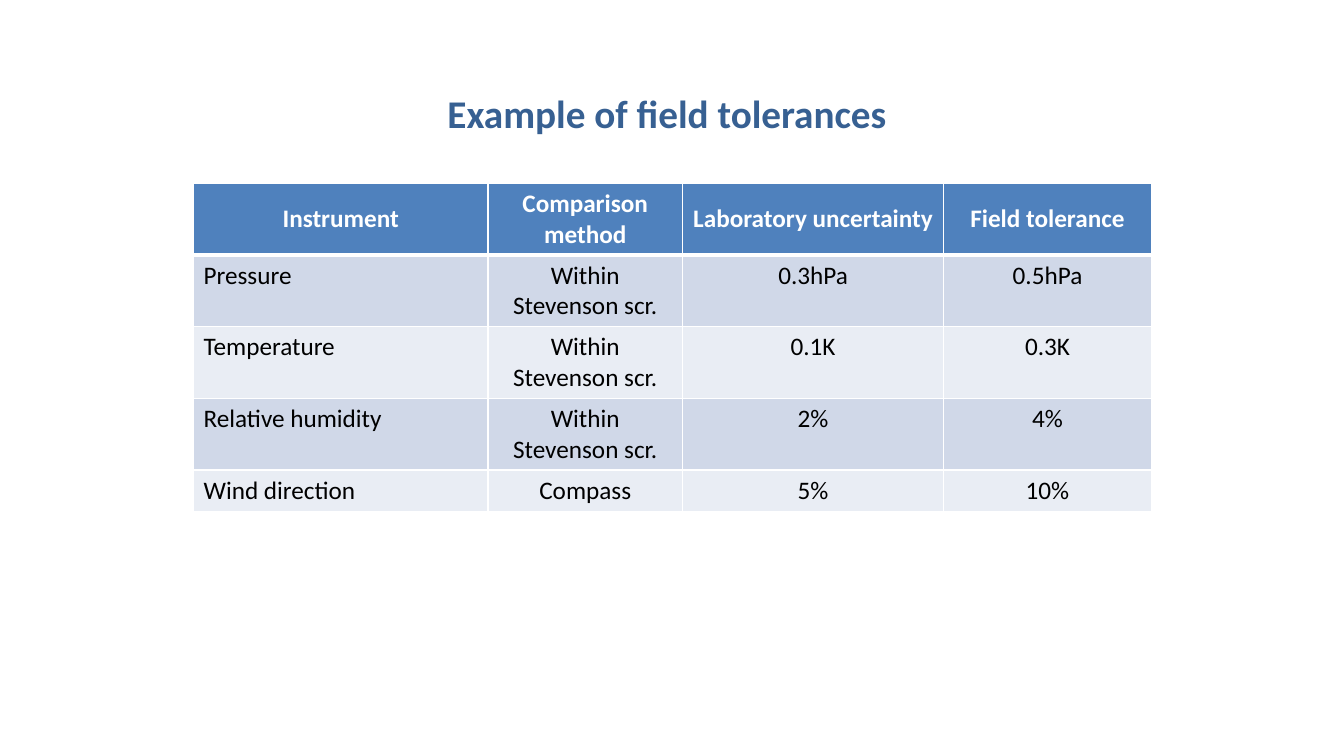
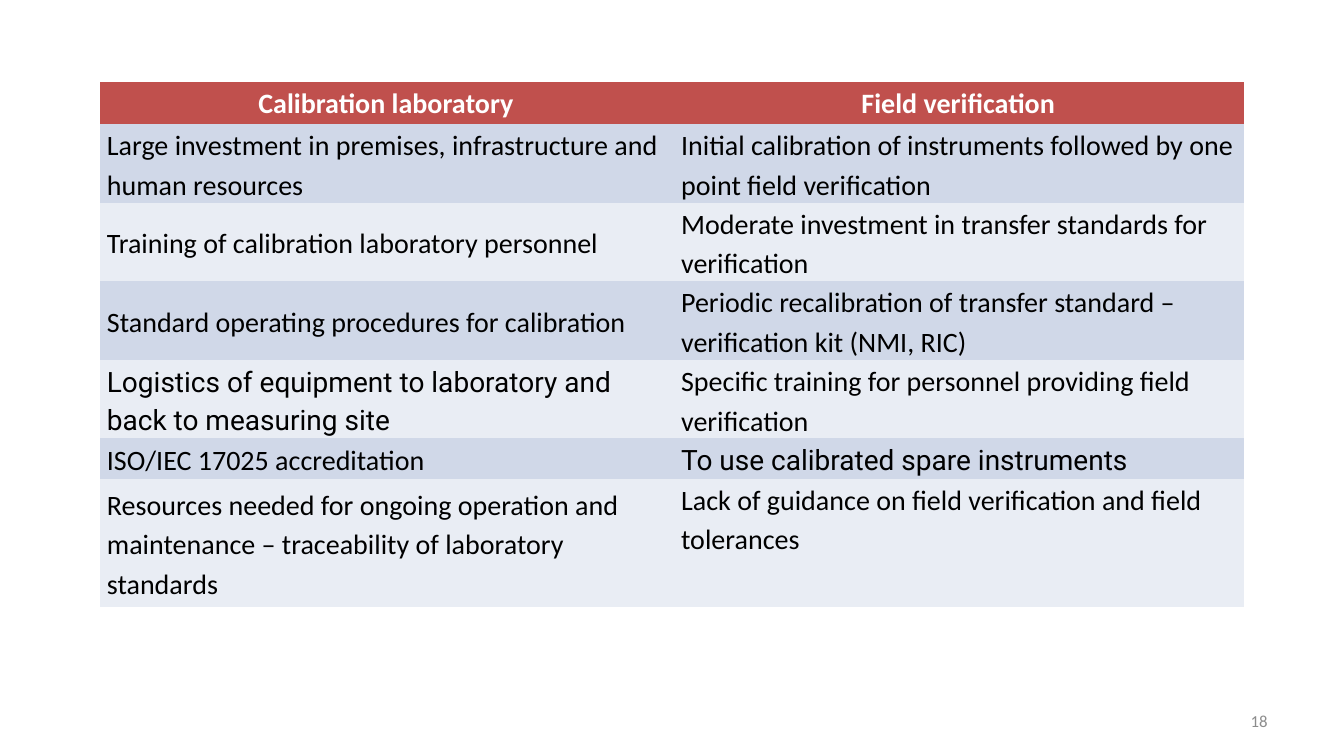
from pptx import Presentation
from pptx.dml.color import RGBColor
from pptx.enum.text import MSO_ANCHOR as Anchor, PP_ALIGN as Align
from pptx.oxml import parse_xml
from pptx.oxml.ns import nsdecls, qn
from pptx.util import Inches, Pt

WIDE, HIGH = Inches(13.33), Inches(7.5)
FONT, ALT = "Calibri", "Roboto"
WHITE, BLACK, GREY = "FFFFFF", "000000", "8C8C8C"
NAVY, BLUE, RED = "376092", "4F81BD", "C0504D"
BANDS = "D0D8E8", "E9EDF4"
PLAIN = "{2D5ABB26-0587-4C30-8999-92F81FD0307C}"

LIMITS = [
    ("Instrument", "Comparison method", "Laboratory uncertainty", "Field tolerance"),
    ("Pressure", "Within Stevenson scr.", "0.3hPa", "0.5hPa"),
    ("Temperature", "Within Stevenson scr.", "0.1K", "0.3K"),
    ("Relative humidity", "Within Stevenson scr.", "2%", "4%"),
    ("Wind direction", "Compass", "5%", "10%"),
]
HAUL = "Logistics of equipment to laboratory and back to measuring site"
SPARE = "To use calibrated spare instruments"
NEEDS = [
    ("Calibration laboratory", "Field verification"),
    ("Large investment in premises, infrastructure and human resources",
     "Initial calibration of instruments followed by one point field verification"),
    ("Training of calibration laboratory personnel",
     "Moderate investment in transfer standards for verification"),
    ("Standard operating procedures for calibration",
     "Periodic recalibration of transfer standard – verification kit (NMI, RIC)"),
    (HAUL, "Specific training for personnel providing field verification"),
    ("ISO/IEC 17025 accreditation", SPARE),
    ("Resources needed for ongoing operation and maintenance – "
     "traceability of laboratory standards",
     "Lack of guidance on field verification and field tolerances"),
]


def color(code):
    return RGBColor.from_string(code)


def place(left, top, width, height):
    """Turn percentages of the slide into lengths."""
    return (int(WIDE * left / 100), int(HIGH * top / 100),
            int(WIDE * width / 100), int(HIGH * height / 100))


def write(para, text, size, ink, bold=False, font=FONT, align=Align.LEFT):
    para.alignment = align
    run = para.add_run()
    run.text = text
    face = run.font
    face.name, face.size, face.bold = font, Pt(size), bold
    face.color.rgb = color(ink)


def label(slide, box, text, size, ink, wrap=True, anchor=Anchor.TOP, **style):
    frame = slide.shapes.add_textbox(*place(*box)).text_frame
    frame.word_wrap, frame.vertical_anchor = wrap, anchor
    write(frame.paragraphs[0], text, size, ink, **style)


def share(tracks, total, weights, side):
    """Split a length among columns or rows by weight."""
    for track, weight in zip(tracks, weights):
        setattr(track, side, int(total * weight / sum(weights)))


def grid(slide, box, data, cols, rows, head):
    """Add a banded table and yield row, column, cell and text."""
    spot = place(*box)
    frame = slide.shapes.add_table(len(rows), len(cols), *spot)
    for style in frame._element.iter(qn("a:tableStyleId")):
        style.text = PLAIN
    table = frame.table
    share(table.columns, spot[2], cols, "width")
    share(table.rows, spot[3], rows, "height")
    for r, line in enumerate(data):
        for c, text in enumerate(line):
            cell = table.cell(r, c)
            cell.fill.solid()
            cell.fill.fore_color.rgb = color(BANDS[(r - 1) % 2] if r else head)
            yield r, c, cell, text


def inset(cell, across, down):
    cell.margin_left = cell.margin_right = Inches(across)
    cell.margin_top = cell.margin_bottom = Inches(down)


def border(cell, base):
    """Draw white edges, the bottom one with its own width."""
    props = cell._tc.get_or_add_tcPr()
    for i, (side, width) in enumerate(zip("LRTB", (1, 1, 1, base))):
        props.insert(i, parse_xml(
            f'<a:ln{side} {nsdecls("a")} w="{Pt(width)}"><a:solidFill>'
            f'<a:srgbClr val="{WHITE}"/></a:solidFill></a:ln{side}>'))


def limits(slide, box):
    for r, c, cell, text in grid(slide, box, LIMITS, (2.92, 1.93, 2.59, 2.06),
                                 (0.7, 0.7, 0.7, 0.7, 0.41), BLUE):
        top = r == 0
        inset(cell, 0.1, 0.05)
        border(cell, 3 if r < 1 else 1)
        cell.vertical_anchor = Anchor.MIDDLE if top else Anchor.TOP
        write(cell.text_frame.paragraphs[0], text, 18, WHITE if top else BLACK,
              top, align=Align.CENTER if top or c else Align.LEFT)


def needs(slide, box):
    last = len(NEEDS) - 1
    for r, c, cell, text in grid(slide, box, NEEDS, (1, 1),
                                 (0.42, 0.78, 0.78, 0.78, 0.78, 0.4, 1.27), RED):
        top = r == 0
        inset(cell, 0.07, 0)
        high = top or (r, c) == (last, 1)
        cell.vertical_anchor = Anchor.TOP if high else Anchor.MIDDLE
        para = cell.text_frame.paragraphs[0]
        para.line_spacing, para.space_after = 1.15, Pt(8)
        if c and not top:
            para._p.get_or_add_pPr().set("marL", str(Inches(0.02)))
        write(para, text, 20, WHITE if top else BLACK, top,
              ALT if text in (HAUL, SPARE) else FONT,
              Align.CENTER if top else Align.LEFT)


def main():
    deck = Presentation()
    deck.slide_width, deck.slide_height = WIDE, HIGH
    blank = deck.slide_layouts[6]

    first = deck.slides.add_slide(blank)
    limits(first, (14.4, 24.27, 71.27, 42.8))
    label(first, (32.56, 11.2, 34.58, 7.6), "Example of field tolerances",
          28, NAVY, wrap=False, bold=True)

    second = deck.slides.add_slide(blank)
    label(second, (71.72, 92.67, 23.33, 5.33), "18", 12, GREY,
          anchor=Anchor.MIDDLE, align=Align.RIGHT)
    needs(second, (7.43, 10.8, 85.15, 69.47))
    deck.save("out.pptx")


if __name__ == "__main__":
    main()
